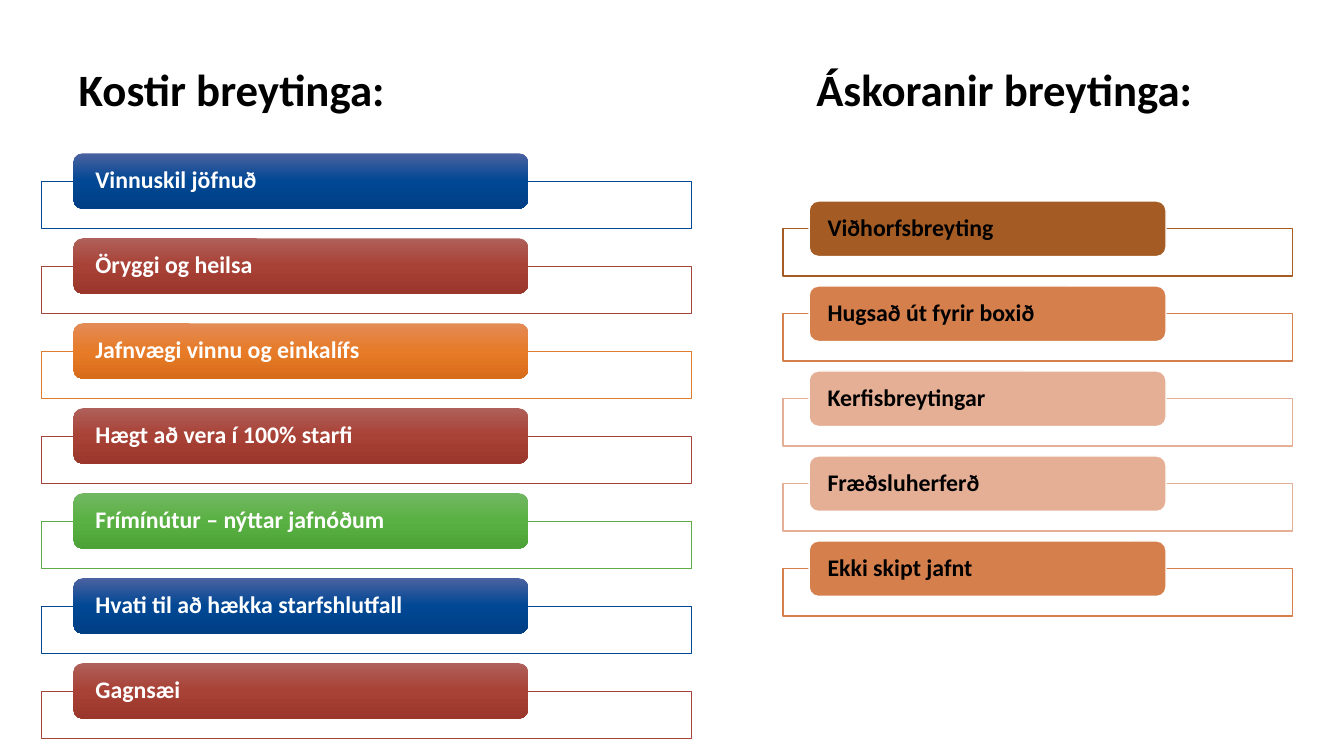
from copy import deepcopy

from lxml.etree import SubElement
from pptx import Presentation
from pptx.dml.color import RGBColor
from pptx.enum.shapes import MSO_SHAPE
from pptx.enum.text import MSO_ANCHOR, MSO_AUTO_SIZE, PP_ALIGN
from pptx.oxml.ns import qn
from pptx.util import Pt

BLUE = ("004794", ("4B62A0", "004794", "003F84"))
RED = ("A3453B", ("AF605A", "A84136", "9A362B"))
ORANGE = ("DE7C31", ("E38B57", "E77B28", "D76C1A"))
GREEN = ("5DAC48", ("71B762", "5AB143", "4DA237"))

BENEFITS = [
    ("Vinnuskil jöfnuð", *BLUE),
    ("Öryggi og heilsa", *RED),
    ("Jafnvægi vinnu og einkalífs", *ORANGE),
    ("Hægt að vera í 100% starfi", *RED),
    ("Frímínútur – nýttar jafnóðum", *GREEN),
    ("Hvati til að hækka starfshlutfall", *BLUE),
    ("Gagnsæi", *RED),
]
CHALLENGES = [
    ("Viðhorfsbreyting", "A45C24", ("A45C24",)),
    ("Hugsað út fyrir boxið", "D57F4D", ("D57F4D",)),
    ("Kerfisbreytingar", "E5AF96", ("E5AF96",)),
    ("Fræðsluherferð", "E5AF96", ("E5AF96",)),
    ("Ekki skipt jafnt", "D57F4D", ("D57F4D",)),
]


def rgb(color):
    return RGBColor.from_string(color)


class Deck:
    font = "Calibri"
    heading_size = 32
    label_size = 17
    pitch = 60.7
    frame_drop = 19.8
    frame_height = 33.9
    label_height = 39.6

    def __init__(self, s):
        self.s = s

    def set_text(self, sp, text, size, color, anchor):
        tf = sp.text_frame
        tf.text = text
        tf.word_wrap = True
        tf.auto_size = MSO_AUTO_SIZE.NONE
        tf.vertical_anchor = anchor
        p = tf.paragraphs[0]
        p.alignment = PP_ALIGN.LEFT
        p.line_spacing = 0.9
        r = p.runs[0]
        r.font.name = self.font
        r.font.size = Pt(size)
        r.font.bold = True
        r.font.color.rgb = rgb(color)
        return tf

    def heading(self, sp, text, x, y, w, h):
        sp.left, sp.top, sp.width, sp.height = Pt(x), Pt(y), Pt(w), Pt(h)
        tf = self.set_text(sp, text, self.heading_size, "000000", MSO_ANCHOR.BOTTOM)
        tf.paragraphs[0].space_before = Pt(10)

    def shape(self, kind, x, y, w, h, line, line_width):
        sp = self.s.shapes.add_shape(kind, Pt(x), Pt(y), Pt(w), Pt(h))
        sp.shadow.inherit = False
        if line:
            sp.line.color.rgb = rgb(line)
            sp.line.width = Pt(line_width)
        else:
            sp.line.fill.background()
        return sp

    def frame(self, x, y, w, line, line_width):
        sp = self.shape(MSO_SHAPE.RECTANGLE, x, y, w, self.frame_height, line, line_width)
        sp.fill.solid()
        sp.fill.fore_color.rgb = rgb("FFFFFF")
        white = sp._element.spPr.find(qn("a:solidFill")).find(qn("a:srgbClr"))
        SubElement(white, qn("a:alpha"), val="90000")

    def label(self, text, x, y, w, colors, text_color, inset, line):
        sp = self.shape(MSO_SHAPE.ROUNDED_RECTANGLE, x, y, w, self.label_height, line, 1)
        if len(colors) == 1:
            sp.fill.solid()
            sp.fill.fore_color.rgb = rgb(colors[0])
        else:
            self.gradient(sp, colors)
        tf = self.set_text(sp, text, self.label_size, text_color, MSO_ANCHOR.MIDDLE)
        tf.margin_left = tf.margin_right = Pt(inset)
        tf.margin_top = tf.margin_bottom = 0

    def gradient(self, sp, colors):
        sp.fill.gradient()
        sp.fill.gradient_angle = 270
        stops = sp._element.spPr.find(qn("a:gradFill")).find(qn("a:gsLst"))
        stops.append(deepcopy(stops[0]))
        for i, (stop, color) in enumerate(zip(sp.fill.gradient_stops, colors)):
            stop.position = i / 2
            stop.color.rgb = rgb(color)

    def labelled_list(self, items, top, frame_x, frame_w, frame_line,
                      label_x, label_w, text_color, inset, label_line=None):
        for i, (text, line, colors) in enumerate(items):
            y = top + i * self.pitch
            self.frame(frame_x, y + self.frame_drop, frame_w, line, frame_line)
            self.label(text, label_x, y, label_w, colors, text_color, inset, label_line)


def main():
    prs = Presentation()
    prs.slide_width, prs.slide_height = Pt(960), Pt(540)
    s = prs.slides.add_slide(prs.slide_layouts[5])
    deck = Deck(s)
    deck.heading(s.shapes.title, "Kostir breytinga:", 49, 21.6, 406, 64.8)
    challenges = s.shapes.add_textbox(0, 0, 0, 0)
    deck.heading(challenges, "Áskoranir breytinga:", 576, 21.6, 384, 64.8)
    deck.labelled_list(BENEFITS, 109.5, 29.3, 464.4, 0.5, 52.5, 324.7, "FFFFFF", 13.7)
    deck.labelled_list(CHALLENGES, 143.6, 559.4, 363.8, 1, 578, 254.9, "000000", 11.2, "FFFFFF")
    prs.save("out.pptx")


if __name__ == "__main__":
    main()
